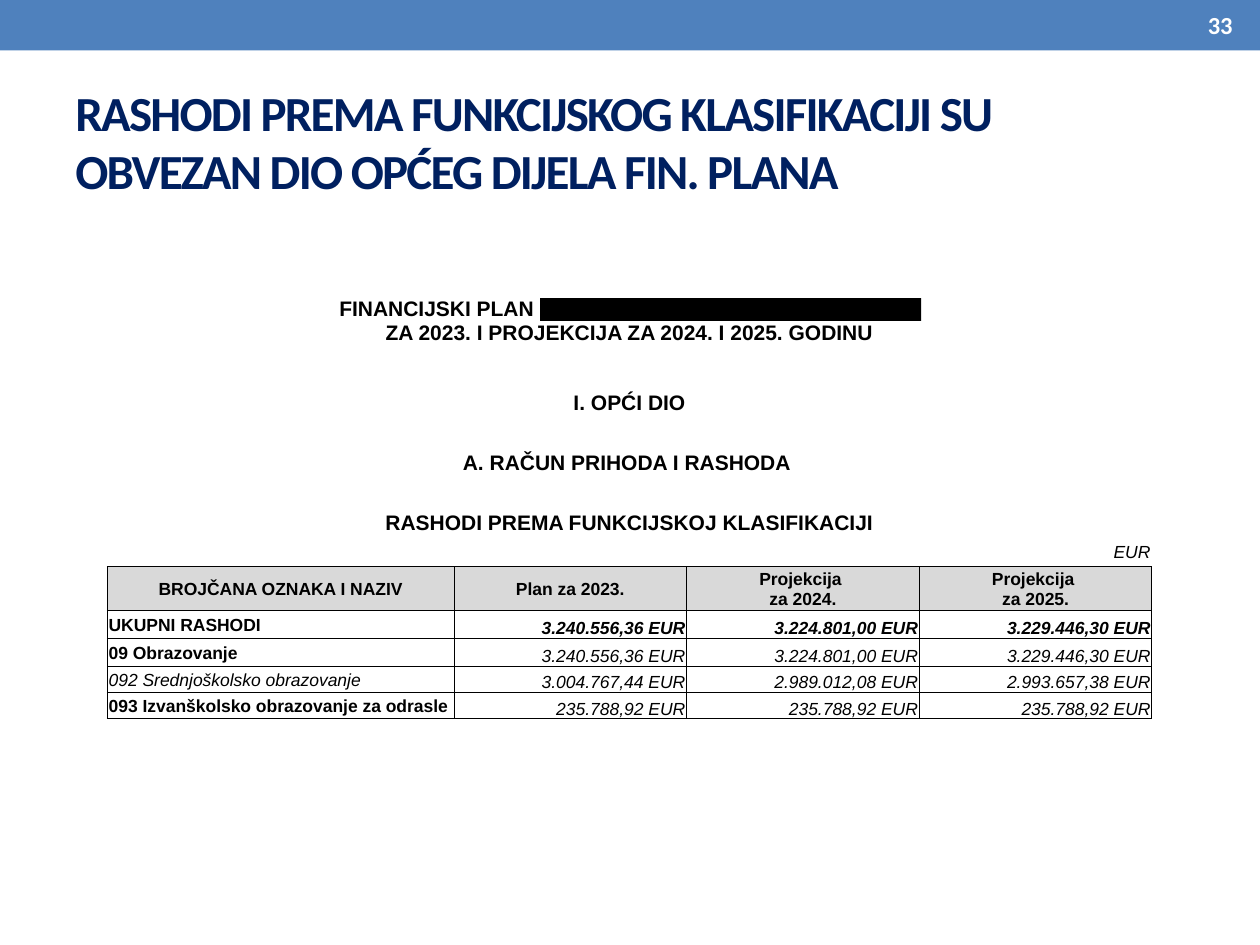
from dataclasses import dataclass

from lxml.etree import SubElement as Sub
from pptx import Presentation
from pptx.dml.color import RGBColor as Rgb
from pptx.enum.shapes import MSO_SHAPE as Shape
from pptx.enum.text import MSO_ANCHOR as Anchor, PP_ALIGN as Align
from pptx.oxml.ns import qn
from pptx.util import Cm, Pt


@dataclass(frozen=True)
class Theme:
    blue: Rgb = Rgb(0x4F, 0x81, 0xBD)
    navy: Rgb = Rgb(0x00, 0x20, 0x60)
    black: Rgb = Rgb(0, 0, 0)
    white: Rgb = Rgb(255, 255, 255)
    grey: Rgb = Rgb(0xD9, 0xD9, 0xD9)
    title: Pt = Pt(28)
    page: Pt = Pt(14)
    head: Pt = Pt(12)
    cell: Pt = Pt(10)


theme = Theme()
PLAIN = "{2D5ABB26-0587-4C30-8999-92F81FD0307C}"  # no style, no grid


def write(frame, text, color, align=Align.LEFT, **form):
    """Fill a text frame, one paragraph per line, in one format."""
    frame.text = text
    for par in frame.paragraphs:
        par.alignment = align
        for run in par.runs:
            run.font.color.rgb = color
            for name, value in form.items():
                setattr(run.font, name, value)


def block(left, top, width, height, color):
    box = slide.shapes.add_shape(
        Shape.RECTANGLE, Cm(left), Cm(top), Cm(width), Cm(height))
    box.shadow.inherit = False
    box.fill.solid()
    box.fill.fore_color.rgb = color
    box.line.fill.background()


deck = Presentation()
deck.slide_width, deck.slide_height = Cm(25.4), Cm(19.05)
slide = deck.slides.add_slide(deck.slide_layouts[6])

block(0, 0, 25.4, 1.02, theme.blue)

# Title and page number
labels = [
    ((1.27, 1.47, 22.86, 2.74), Align.LEFT, theme.navy, theme.title,
     "RASHODI PREMA FUNKCIJSKOG KLASIFIKACIJI SU "
     "OBVEZAN DIO OPĆEG DIJELA FIN. PLANA"),
    ((23.09, 0.05, 2.01, 0.91), Align.RIGHT, theme.white, theme.page, "33"),
]
for place, align, color, size, text in labels:
    frame = slide.shapes.add_textbox(*map(Cm, place)).text_frame
    frame.word_wrap = True
    frame.vertical_anchor = Anchor.MIDDLE
    write(frame, text, color, align, name="Calibri", size=size, bold=True)
    if size == theme.title:
        frame.paragraphs[0].runs[0].font._element.set("spc", "-100")

# Table: headings in merged rows, then the figures
heads = {
    0: "FINANCIJSKI PLAN\nZA 2023. I PROJEKCIJA ZA 2024. I 2025. GODINU",
    2: "I. OPĆI DIO",
    4: "A. RAČUN PRIHODA I RASHODA ",
    6: "RASHODI PREMA FUNKCIJSKOJ KLASIFIKACIJI",
}
first = 8
grid = [
    ["BROJČANA OZNAKA I NAZIV", "Plan za 2023.",
     "Projekcija \nza 2024.", "Projekcija \nza 2025."],
    ["UKUPNI RASHODI", "3.240.556,36", "3.224.801,00", "3.229.446,30"],
    ["09 Obrazovanje", "3.240.556,36", "3.224.801,00", "3.229.446,30"],
    ["092 Srednjoškolsko obrazovanje",
     "3.004.767,44", "2.989.012,08", "2.993.657,38"],
    ["093 Izvanškolsko obrazovanje za odrasle"] + ["235.788,92"] * 3,
]
cols = [6.99, 4.69, 4.69, 4.69]
rows = [1.47, 0.64, 0.56, 0.61, 0.64, 0.61, 0.56, 0.61,
        0.89, 0.56, 0.56, 0.53, 0.53, 0.53]
table = slide.shapes.add_table(
    len(rows), len(cols), Cm(2.16), Cm(5.72),
    Cm(sum(cols)), Cm(sum(rows))).table
table.first_row = table.horz_banding = False
table._tbl.tblPr.find(qn("a:tableStyleId")).text = PLAIN
for col, width in zip(table.columns, cols):
    col.width = Cm(width)
for row, height in zip(table.rows, rows):
    row.height = Cm(height)

for cell in table.iter_cells():
    cell.margin_left = cell.margin_right = cell.margin_top = Cm(0.03)
    cell.margin_bottom = 0
    cell.vertical_anchor = Anchor.MIDDLE

for row, text in heads.items():
    cell = table.cell(row, 0)
    cell.merge(table.cell(row, len(cols) - 1))
    write(cell.text_frame, text, theme.black, Align.CENTER,
          name="Arial", size=theme.head, bold=True)
lead = table.cell(0, 0).text_frame.paragraphs[0]
lead.alignment = Align.LEFT
lead._p.get_or_add_pPr().set("marL", str(Cm(4.65)))

write(table.cell(first - 1, 3).text_frame, "EUR", theme.black, Align.RIGHT,
      name="Arial", size=theme.cell, italic=True)

for r, line in enumerate(grid):
    for c, text in enumerate(line):
        cell = table.cell(first + r, c)
        figure = r > 0 and c > 0
        if figure:
            text += " EUR"
            cell.vertical_anchor = Anchor.BOTTOM
        align = (Align.CENTER if r == 0 else
                 Align.RIGHT if figure else Align.LEFT)
        bold = r < 2 or (c == 0 and r != 3)
        write(cell.text_frame, text, theme.black, align, name="Arial",
              size=theme.cell, bold=bold, italic=figure or not bold)
        for side in "LRTB":
            edge = Sub(cell._tc.get_or_add_tcPr(), qn("a:ln" + side),
                       w=str(Pt(0.5)))
            Sub(Sub(edge, qn("a:solidFill")), qn("a:srgbClr"),
                val=str(theme.black))
        cell.fill.solid()
        cell.fill.fore_color.rgb = theme.white if r else theme.grey

# Empty cells: small type keeps their rows low
for cell in table.iter_cells():
    if not cell.text:
        Sub(cell.text_frame.paragraphs[0]._p, qn("a:endParaRPr"),
            sz=str(int(theme.cell.pt * 100)))

# Bar over the name of the school
block(10.89, 6.01, 7.68, 0.46, theme.black)

deck.save("out.pptx")
